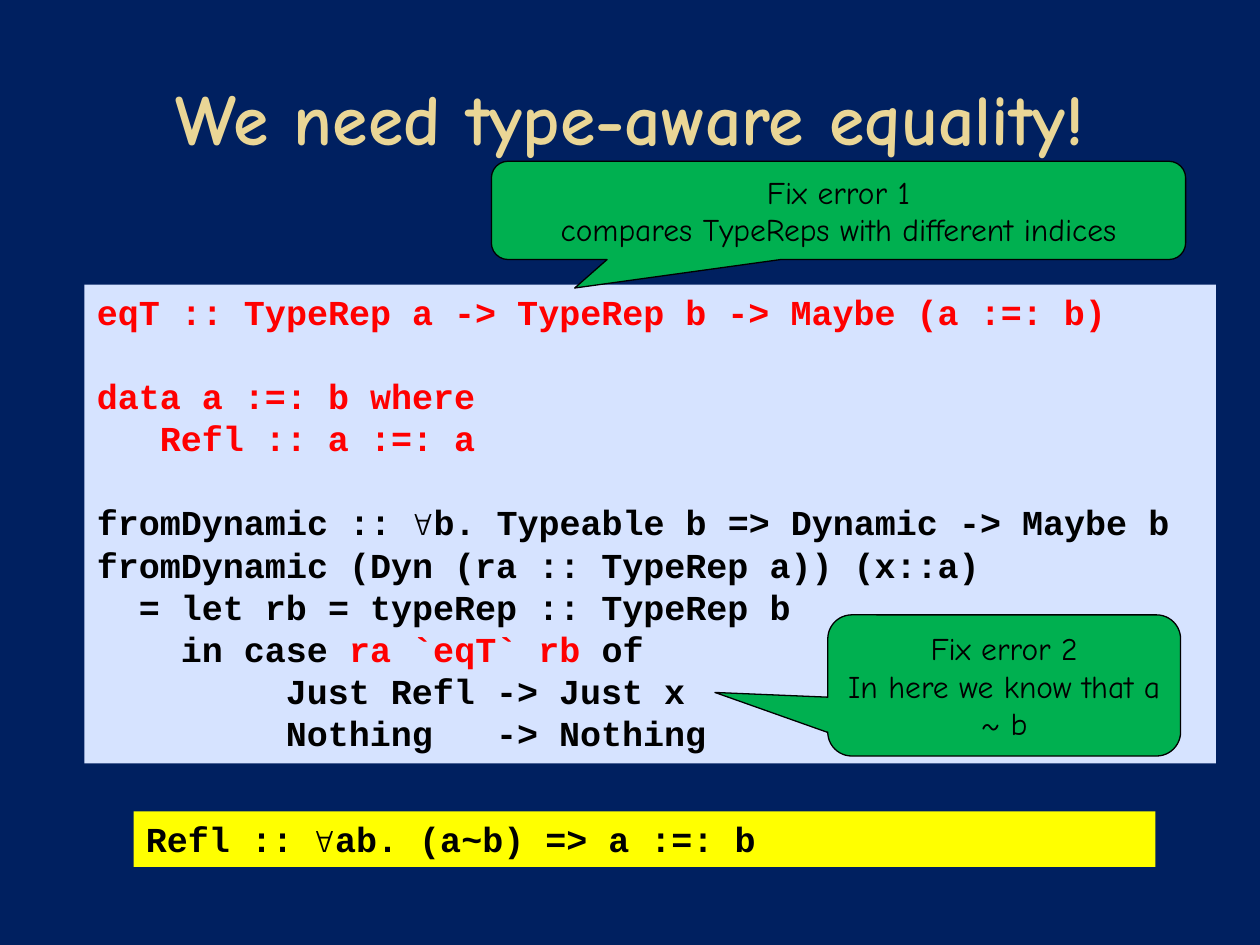
"""Build the slide on type-aware equality with its code panel, callouts and rule."""
from dataclasses import dataclass

from pptx import Presentation
from pptx.dml.color import RGBColor
from pptx.enum.shapes import MSO_SHAPE
from pptx.enum.text import MSO_ANCHOR, PP_ALIGN
from pptx.util import Inches, Pt


@dataclass(frozen=True)
class Theme:
    background: str = "002060"
    title_main: str = "EAD696"
    title_end: str = "E7D081"
    panel: str = "D6E3FF"
    callout: str = "00B050"
    rule: str = "FFFF00"
    ink: str = "000000"
    changed: str = "FF0000"
    prose_font: str = "Comic Neue"
    code_font: str = "Courier New"
    title_size: int = 41
    code_size: int = 20
    callout_size: int = 18
    leading: float = 1.2
    char_width: float = 0.6


THEME = Theme()
INK, CHANGED = THEME.ink, THEME.changed
CODE = {"name": THEME.code_font, "size": Pt(THEME.code_size), "bold": True}
PROSE = {"name": THEME.prose_font, "size": Pt(THEME.callout_size)}
TITLE = {"name": THEME.prose_font, "size": Pt(THEME.title_size), "bold": True}

# Each line: indent in characters, blank lines above, runs of (text, colour, bold).
PROGRAM = [
    (0, 0, [("eqT :: TypeRep a -> TypeRep b -> Maybe (a :=: b)", CHANGED, True)]),
    (0, 1, [("data a :=: b where", CHANGED, True)]),
    (3, 0, [("Refl :: a :=: a", CHANGED, True)]),
    (0, 1, [("fromDynamic :: ", INK, True), ("∀", INK, False),
            ("b. Typeable b => Dynamic -> Maybe b", INK, True)]),
    (0, 0, [("fromDynamic (Dyn (ra :: TypeRep a)) (x::a)", INK, True)]),
    (2, 0, [("= let rb = typeRep :: TypeRep b", INK, True)]),
    (4, 0, [("in case ", INK, True), ("ra `eqT` rb ", CHANGED, True), ("of", INK, True)]),
    (9, 0, [("Just Refl -> Just x", INK, True)]),
    (9, 0, [("Nothing   -> Nothing", INK, True)]),
]
REFL_RULE = [(0, 0, [("Refl :: ∀ab. (a~b) => a :=: b", INK, True)])]


def apply_format(target, values):
    """Set every named attribute of the target."""
    for name, value in values.items():
        setattr(target, name, value)


def paint(fill, colour):
    """Give a fill one solid colour."""
    fill.solid()
    fill.fore_color.rgb = RGBColor.from_string(colour)


def add_run(paragraph, text, colour, values):
    """Append a formatted, coloured run."""
    run = paragraph.add_run()
    run.text = text
    apply_format(run.font, values)
    paint(run.font.fill, colour)


def add_panel(slide, kind, box, colour, anchor):
    """Add a filled shape without outline and return it."""
    panel = slide.shapes.add_shape(kind, *map(Inches, box))
    panel.shadow.inherit = False
    paint(panel.fill, colour)
    panel.line.fill.background()
    apply_format(panel.text_frame, {"word_wrap": True, "vertical_anchor": anchor})
    return panel


def next_paragraph(frame, index):
    """Return the first paragraph, or a new one after it."""
    return frame.add_paragraph() if index else frame.paragraphs[0]


def add_title(slide, text, box):
    """Add the centred title with its gradient lettering."""
    title = slide.shapes.add_textbox(*map(Inches, box))
    apply_format(title.text_frame, {"word_wrap": True, "vertical_anchor": MSO_ANCHOR.MIDDLE})
    paragraph = title.text_frame.paragraphs[0]
    paragraph.alignment = PP_ALIGN.CENTER
    add_run(paragraph, text, THEME.title_main, TITLE)
    lettering = paragraph.runs[0].font.fill
    lettering.gradient()
    lettering.gradient_angle = 280
    stops = zip(lettering.gradient_stops, (0.73, 1), (THEME.title_main, THEME.title_end))
    for stop, position, colour in stops:
        stop.position = position
        stop.color.rgb = RGBColor.from_string(colour)


def add_code(slide, lines, box, colour):
    """Add a code panel whose lines are indented by whole characters."""
    panel = add_panel(slide, MSO_SHAPE.RECTANGLE, box, colour, MSO_ANCHOR.TOP)
    pitch = THEME.code_size * THEME.leading
    for index, (indent, blank_lines, runs) in enumerate(lines):
        paragraph = next_paragraph(panel.text_frame, index)
        apply_format(paragraph, {"alignment": PP_ALIGN.LEFT, "line_spacing": Pt(pitch),
                                 "space_before": Pt(blank_lines * pitch)})
        margin = Pt(indent * THEME.code_size * THEME.char_width)
        paragraph._p.get_or_add_pPr().set("marL", str(margin))
        for text, ink, bold in runs:
            add_run(paragraph, text, ink, {**CODE, "bold": bold})


def add_callout(slide, lines, box, tip):
    """Add a green speech callout pointing at its tip."""
    callout = add_panel(slide, MSO_SHAPE.ROUNDED_RECTANGULAR_CALLOUT, box,
                        THEME.callout, MSO_ANCHOR.MIDDLE)
    for index, value in enumerate((*tip, 0.17)):
        callout.adjustments[index] = value
    paint(callout.line.fill, INK)
    callout.line.width = Pt(0.75)
    for index, text in enumerate(lines):
        paragraph = next_paragraph(callout.text_frame, index)
        apply_format(paragraph, {"alignment": PP_ALIGN.CENTER,
                                 "line_spacing": Pt(THEME.callout_size * THEME.leading)})
        add_run(paragraph, text, INK, PROSE)


def main():
    """Build and save the slide."""
    deck = Presentation()
    apply_format(deck, {"slide_width": Inches(10), "slide_height": Inches(7.5)})
    slide = deck.slides.add_slide(deck.slide_layouts[6])
    paint(slide.background.fill, THEME.background)
    add_title(slide, "We need type-aware equality!", (0.28, 0.3, 9.45, 1.25))
    add_code(slide, PROGRAM, (0.67, 2.26, 8.98, 3.8), THEME.panel)
    add_callout(slide, ["Fix error 2", "In here we know that a ~ b"],
                (6.57, 4.88, 2.8, 1.12), (-0.82, 0.05))
    add_callout(slide, ["Fix error 1", "compares TypeReps with different indices"],
                (3.9, 1.28, 5.51, 0.78), (-0.38, 0.79))
    add_code(slide, REFL_RULE, (1.06, 6.44, 8.11, 0.44), THEME.rule)
    deck.save("out.pptx")


if __name__ == "__main__":
    main()
